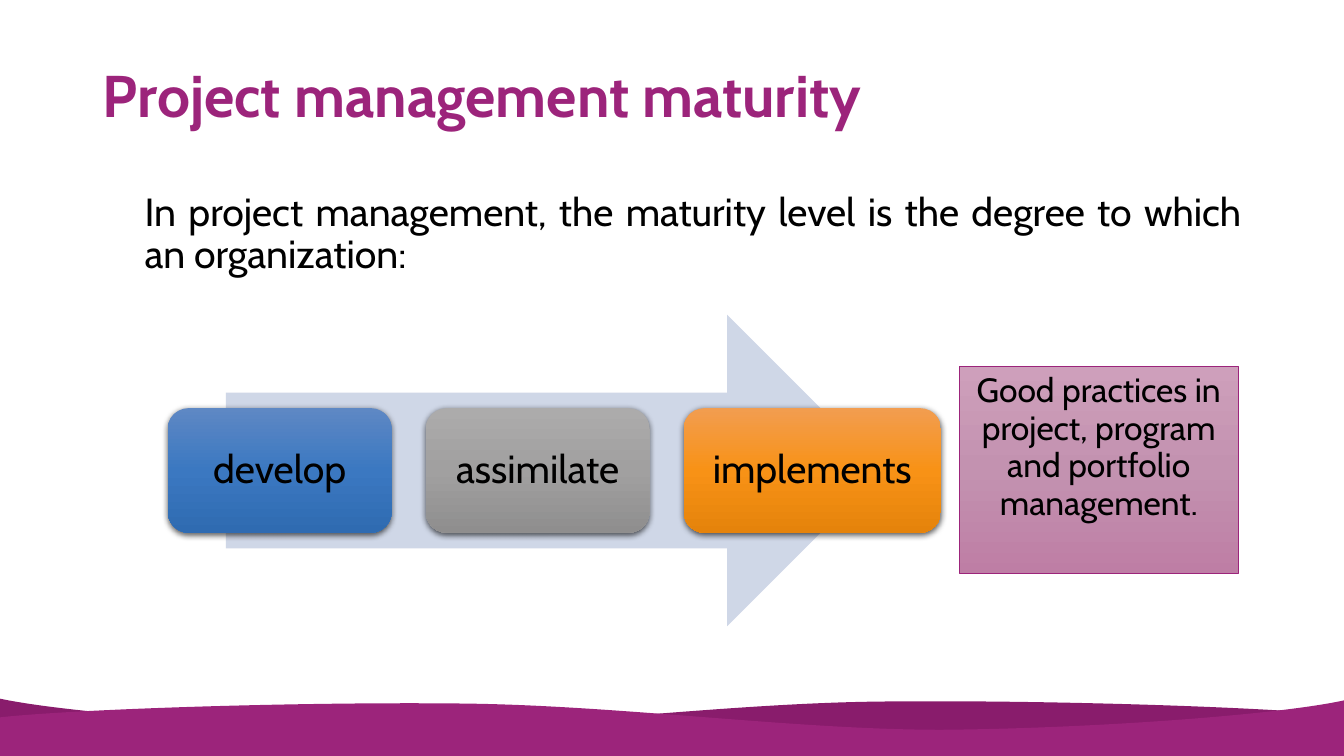
from copy import deepcopy

from lxml.etree import SubElement
from pptx import Presentation
from pptx.dml.color import RGBColor
from pptx.enum.shapes import MSO_SHAPE as Shape
from pptx.enum.text import MSO_ANCHOR as Anchor, MSO_AUTO_SIZE as AutoSize, PP_ALIGN as Align
from pptx.oxml.ns import qn
from pptx.util import Cm, Pt

FONT = "Cabin"
BLACK = RGBColor(0x00, 0x00, 0x00)
PURPLE = RGBColor(0x9C, 0x24, 0x7B)
DARK_PURPLE = RGBColor(0x89, 0x1C, 0x6C)
ARROW_BLUE = RGBColor(0xCF, 0xD7, 0xE7)
PINKS = (RGBColor(0xCE, 0x9F, 0xBB), RGBColor(0xC3, 0x92, 0xB0), RGBColor(0xBE, 0x7E, 0xA5))
BLUES = (RGBColor(0x5E, 0x88, 0xC4), RGBColor(0x3B, 0x78, 0xC1), RGBColor(0x2F, 0x6B, 0xB1))
GREYS = (RGBColor(0xAC, 0xAB, 0xAB), RGBColor(0xA1, 0xA0, 0xA0), RGBColor(0x8F, 0x8E, 0x8E))
ORANGES = (RGBColor(0xF2, 0x9D, 0x50), RGBColor(0xF8, 0x92, 0x16), RGBColor(0xE5, 0x83, 0x0B))

SLIDE_WIDTH, SLIDE_HEIGHT = 33.87, 19.05
WAVE_LEFT = -0.03
WAVE_CURVES = 3
WAVE_POINTS = (
    (SLIDE_WIDTH, 18.03),
    (31.9, 17.81), (26.06, 17.63), (22.1, 17.68),
    (18.16, 17.73), (13.79, 18.34), (10.11, 18.34),
    (6.43, 18.31), (1.73, 17.98), (WAVE_LEFT, 17.6),
    (WAVE_LEFT, SLIDE_HEIGHT), (SLIDE_WIDTH, SLIDE_HEIGHT),
)
STEPS = (("develop", 5.64, BLUES), ("assimilate", 5.64, GREYS), ("implements", 6.48, ORANGES))
CARD_GAP = 0.86


def place(shape, left, top, width, height):
    shape.left, shape.top = Cm(left), Cm(top)
    shape.width, shape.height = Cm(width), Cm(height)


def write(shape, text, size, color=BLACK, align=Align.LEFT, anchor=Anchor.TOP, spacing=0.9, bold=False):
    frame = shape.text_frame
    frame.text = text
    frame.word_wrap = True
    frame.auto_size = AutoSize.NONE
    frame.vertical_anchor = anchor
    paragraph = frame.paragraphs[0]
    paragraph.alignment = align
    paragraph.line_spacing = spacing
    font = paragraph.runs[0].font
    font.name, font.size, font.bold = FONT, Pt(size), bold
    font.color.rgb = color
    return paragraph


def add_plain_shape(slide, kind, box):
    shape = slide.shapes.add_shape(kind, *(Cm(length) for length in box))
    shape.shadow.inherit = False
    shape.line.fill.background()
    return shape


def fill_gradient(shape, colors):
    shape.fill.gradient()
    shape.fill.gradient_angle = 270
    stop_list = shape._element.spPr.find(".//" + qn("a:gsLst"))
    stop_list.insert(1, deepcopy(stop_list[0]))
    for stop, color, position in zip(shape.fill.gradient_stops, colors, (0, 0.5, 1)):
        stop.color.rgb = color
        stop.position = position


def add_shadow(shape):
    effects = shape._element.spPr.find(qn("a:effectLst"))
    shadow = SubElement(effects, qn("a:outerShdw"), blurRad=str(Pt(4.5)), dist=str(Pt(1.5)),
                        dir="5400000", algn="ctr", rotWithShape="0")
    color = SubElement(shadow, qn("a:srgbClr"), val=str(BLACK))
    SubElement(color, qn("a:alpha"), val="63000")


def bend_lines(shape, curve_count):
    outline = shape._element.spPr.find(".//" + qn("a:path"))
    lines = outline.findall(qn("a:lnTo"))
    for index in range(curve_count):
        first, second, end = lines[3 * index:3 * index + 3]
        curve = SubElement(outline, qn("a:cubicBezTo"))
        outline.replace(first, curve)
        for line in (first, second, end):
            curve.append(line[0])
        outline.remove(second)
        outline.remove(end)


def add_waves(slide):
    mirrored = [(SLIDE_WIDTH + WAVE_LEFT - x, y + 0.05) for x, y in WAVE_POINTS]
    for points, color in ((WAVE_POINTS, DARK_PURPLE), (mirrored, PURPLE)):
        corners = [(Cm(x), Cm(y)) for x, y in points]
        builder = slide.shapes.build_freeform(*corners[0])
        builder.add_line_segments(corners[1:], close=True)
        wave = builder.convert_to_shape()
        bend_lines(wave, WAVE_CURVES)
        wave.shadow.inherit = False
        wave.fill.solid()
        wave.fill.fore_color.rgb = color
        wave.line.fill.background()


def add_title(slide, box):
    title = slide.shapes.title
    place(title, *box)
    write(title, "Project management maturity", 42, PURPLE, anchor=Anchor.MIDDLE, bold=True)


def add_introduction(slide, box):
    body = slide.placeholders[1]
    place(body, *box)
    paragraph = write(body, "In project management, the maturity level is the degree to which an organization:",
                      28, align=Align.JUSTIFY)
    paragraph.space_before = Pt(10)
    properties = paragraph._p.get_or_add_pPr()
    properties.set("marL", "0")
    properties.set("indent", "0")
    SubElement(properties, qn("a:buNone"))


def add_process(slide, box):
    left, top, width, height = box
    arrow = add_plain_shape(slide, Shape.RIGHT_ARROW, (left + 0.075 * width, top, 0.85 * width, height))
    arrow.fill.solid()
    arrow.fill.fore_color.rgb = ARROW_BLUE
    for name, card_width, colors in STEPS:
        card = add_plain_shape(slide, Shape.ROUNDED_RECTANGLE,
                               (left, top + 0.3 * height, card_width, 0.4 * height))
        fill_gradient(card, colors)
        add_shadow(card)
        write(card, name, 28, align=Align.CENTER, anchor=Anchor.MIDDLE)
        left += card_width + CARD_GAP


def add_result(slide, box):
    result = add_plain_shape(slide, Shape.RECTANGLE, box)
    fill_gradient(result, PINKS)
    result.line.color.rgb = PURPLE
    result.line.width = Pt(0.5)
    paragraph = write(result, "Good practices in project, program and portfolio management.",
                      24, align=Align.CENTER, spacing=Pt(27))
    paragraph.space_before = Pt(10)


def main():
    presentation = Presentation()
    presentation.slide_width, presentation.slide_height = Cm(SLIDE_WIDTH), Cm(SLIDE_HEIGHT)
    slide = presentation.slides.add_slide(presentation.slide_layouts[1])
    add_waves(slide)
    add_title(slide, (2.34, 0.64, 29.21, 3.68))
    add_introduction(slide, (3.39, 4.72, 28.14, 3.2))
    add_result(slide, (24.17, 9.23, 7.04, 5.22))
    add_process(slide, (4.23, 7.93, 19.48, 7.85))
    presentation.save("out.pptx")


if __name__ == "__main__":
    main()
